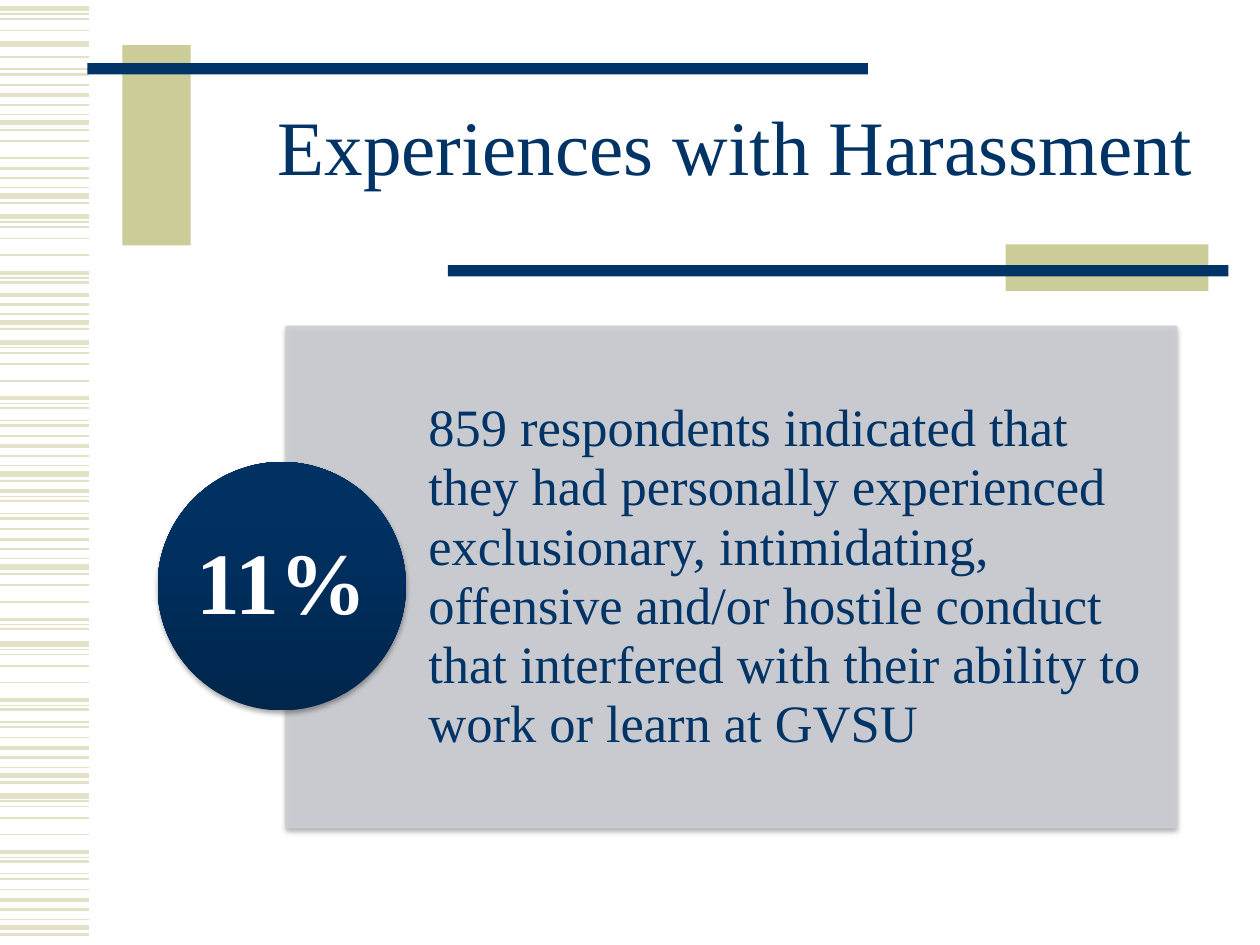
from dataclasses import dataclass

from lxml.etree import SubElement
from pptx import Presentation
from pptx.dml.color import RGBColor
from pptx.enum.shapes import MSO_CONNECTOR, MSO_SHAPE
from pptx.enum.text import MSO_ANCHOR, MSO_AUTO_SIZE, PP_ALIGN
from pptx.oxml.ns import qn
from pptx.util import Pt


@dataclass(frozen=True)
class Theme:
    navy: str = "003366"
    khaki: str = "CCCC99"
    stripe: str = "E3E2C7"
    panel: str = "CCCED3"
    white: str = "FFFFFF"
    black: str = "000000"
    disc_stops: tuple = ((0, "00264C"), (80, "003163"), (100, "003263"))
    font: str = "Times New Roman"
    title_size: int = 44
    body_size: int = 30
    figure_size: int = 50


THEME = Theme()

STRIPE_PATTERN = (
    (0, 3), (3, 0.75), (6, 1), (12.5, 1), (22, 1), (32, 2.25),
    (35, 0.75), (37.5, 1.5), (44.5, 0.75), (47.5, 1.5), (53.5, 1),
    (59.5, 2.25), (65, 1.5), (70.5, 0.75), (75.2, 3), (79.2, 1.5),
)
STRIPE_RUNS = (
    (5, 0, 4), (-50, 14, 15), (-5, 7, 16), (58.7, 4, 5), (36.8, 10, 16),
    (123.8, 0, 8), (108.9, 11, 16), (195.6, 0, 16), (248.8, 5, 16),
    (322, 3, 8), (368, 0, 16), (454.8, 0, 16),
)


def color(value):
    return RGBColor.from_string(value)


def add_alpha(color_node, percent):
    SubElement(color_node, qn("a:alpha"), val=str(percent * 1000))


def add_stripe(page, top, weight):
    stripe = page.shapes.add_connector(
        MSO_CONNECTOR.STRAIGHT, Pt(0), Pt(top), Pt(51), Pt(top))
    stripe.line.color.rgb = color(THEME.stripe)
    stripe.line.width = Pt(weight)
    SubElement(stripe._element.spPr, qn("a:effectLst"))


def add_stripes(page):
    for base, first, end in STRIPE_RUNS:
        for offset, weight in STRIPE_PATTERN[first:end]:
            add_stripe(page, base + offset, weight)


def add_block(page, preset, left, top, width, height, fill):
    block = page.shapes.add_shape(
        preset, Pt(left), Pt(top), Pt(width), Pt(height))
    block.shadow.inherit = False
    block.fill.solid()
    block.fill.fore_color.rgb = color(fill)
    block.line.fill.background()
    return block


def add_soft_shadow(shape):
    effects = shape._element.spPr.find(qn("a:effectLst"))
    shadow = SubElement(effects, qn("a:outerShdw"), blurRad=str(Pt(3.1)),
                        dist=str(Pt(1.8)), dir="5400000", rotWithShape="0")
    add_alpha(SubElement(shadow, qn("a:srgbClr"), val=THEME.black), 35)


def set_gradient(shape, stops, angle):
    shape.fill.gradient()
    shape.fill.gradient_angle = angle
    stop_list = shape._element.spPr.find(".//" + qn("a:gsLst"))
    for old_stop in list(stop_list):
        stop_list.remove(old_stop)
    for position, value in stops:
        stop = SubElement(stop_list, qn("a:gs"), pos=str(position * 1000))
        SubElement(stop, qn("a:srgbClr"), val=value)


def write_text(box, text, size, fill, spacing, align, insets, bold=False):
    frame = box.text_frame
    frame.text = text
    frame.word_wrap = True
    frame.auto_size = MSO_AUTO_SIZE.NONE
    frame.vertical_anchor = MSO_ANCHOR.MIDDLE
    (frame.margin_left, frame.margin_top,
     frame.margin_right, frame.margin_bottom) = map(Pt, insets)
    para = frame.paragraphs[0]
    para.alignment = align
    para.line_spacing = spacing
    para.space_before = Pt(0)
    para.font.name = THEME.font
    para.font.size = Pt(size)
    para.font.bold = bold
    para.font.color.rgb = color(fill)
    return para


def place(page, placeholder, left, top, width, height):
    placeholder.left, placeholder.top = Pt(left), Pt(top)
    placeholder.width, placeholder.height = Pt(width), Pt(height)
    page.shapes._spTree.append(placeholder._element)


def add_frame(page):
    for bounds, fill in (
        ((70, 25.8, 39, 114.5), THEME.khaki),
        ((50, 36, 446, 6.5), THEME.navy),
        ((574.6, 139.7, 116, 26.6), THEME.khaki),
        ((256, 151.5, 446, 6.5), THEME.navy),
    ):
        add_block(page, MSO_SHAPE.RECTANGLE, *bounds, fill)


def add_title(page, text):
    title = page.shapes.title
    place(page, title, 131.8, 41.8, 588.2, 90)
    write_text(title, text, THEME.title_size, THEME.navy, 0.85,
               PP_ALIGN.CENTER, (7.2, 3.6, 7.2, 3.6))


def add_panel(page):
    panel = add_block(page, MSO_SHAPE.RECTANGLE,
                      163.5, 186.5, 509, 286.5, THEME.panel)
    panel.line.color.rgb = color(THEME.panel)
    panel.line.width = Pt(0.75)
    for color_node in panel._element.spPr.findall(".//" + qn("a:srgbClr")):
        add_alpha(color_node, 90)
    add_soft_shadow(panel)


def add_statement(page, text):
    body = page.placeholders[1]
    place(page, body, 244.8, 186.5, 427.2, 286.5)
    para = write_text(body, text, THEME.body_size, THEME.navy, 0.94,
                      PP_ALIGN.LEFT, (0, 16.5, 16.5, 16.5))
    properties = para._p.get_or_add_pPr()
    properties.set("marL", "0")
    properties.set("indent", "0")
    bullet_off = SubElement(properties, qn("a:buNone"))
    properties.find(qn("a:defRPr")).addprevious(bullet_off)


def add_figure(page, text):
    disc = add_block(page, MSO_SHAPE.OVAL, 90, 264, 142, 142, THEME.navy)
    set_gradient(disc, THEME.disc_stops, 90)
    add_soft_shadow(disc)
    write_text(disc, text, THEME.figure_size, THEME.white, 0.9,
               PP_ALIGN.CENTER, (0, 0, 0, 0), bold=True)


def main():
    deck = Presentation()
    deck.slide_width, deck.slide_height = Pt(720), Pt(540)
    page = deck.slides.add_slide(deck.slide_layouts[1])
    add_stripes(page)
    add_frame(page)
    add_title(page, "Experiences with Harassment ")
    add_panel(page)
    add_statement(
        page,
        "859 respondents indicated that they had personally experienced "
        "exclusionary, intimidating, offensive and/or hostile conduct that "
        "interfered with their ability to work or learn at GVSU")
    add_figure(page, "11%")
    deck.save("out.pptx")


if __name__ == "__main__":
    main()
